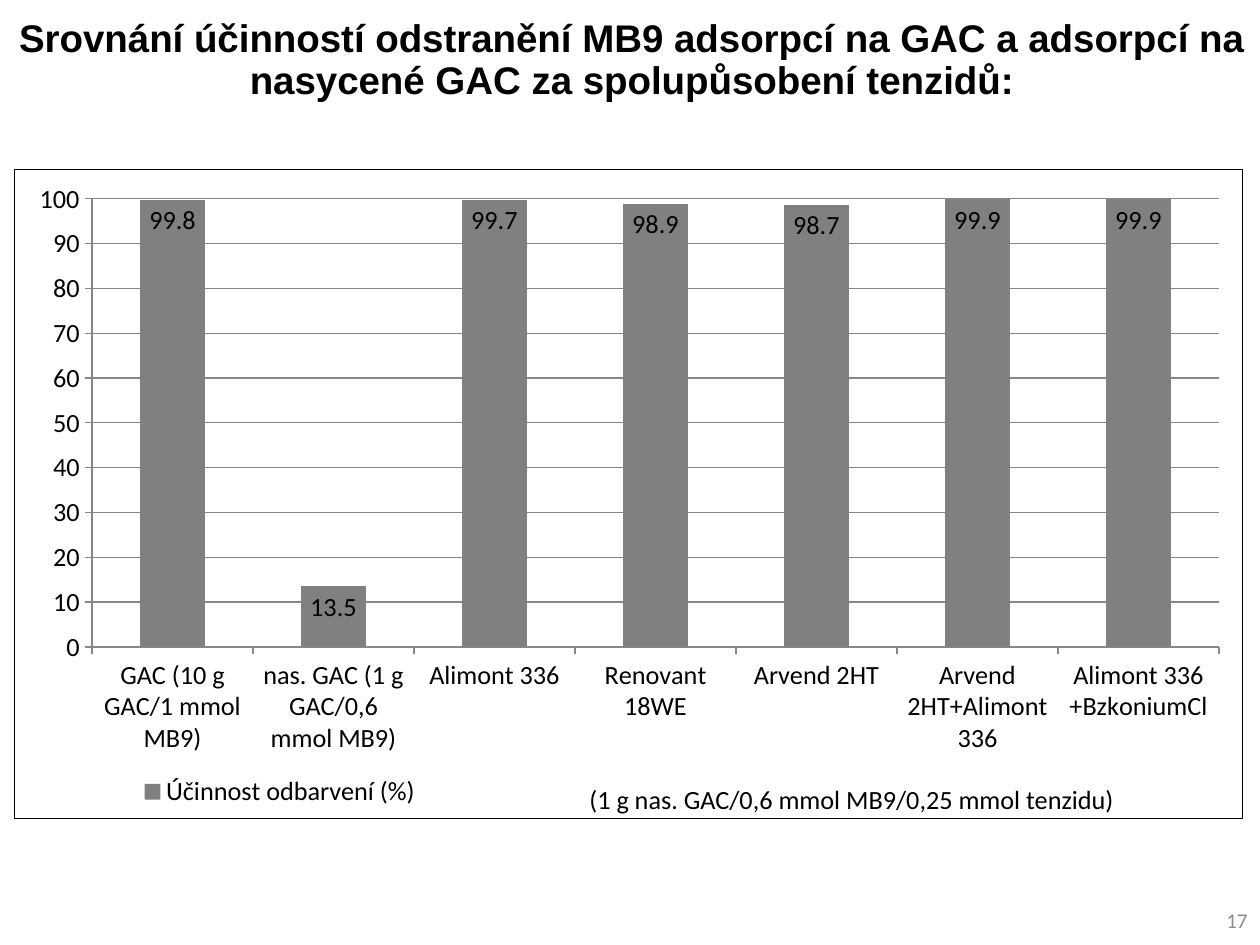
"""Build a slide comparing decolourisation efficiencies in a column chart."""
import pptx
import pptx.chart.data
import pptx.dml.color
import pptx.enum.chart
import pptx.enum.text
import pptx.oxml
import pptx.oxml.ns
import pptx.util

PX = 914400 // 126
BLACK, GREY, GRID = "000000", "808080", "878787"
CHART_LEFT, CHART_TOP, CHART_WIDTH, CHART_HEIGHT = 14, 169, 1229, 650


def color(value):
    return pptx.dml.color.RGBColor.from_string(value)


def write(shape, text, at, size, font="Calibri", ink=BLACK, bold=False, align="LEFT", spacing=1.0):
    shape.left, shape.top, shape.width, shape.height = [length * PX for length in at]
    frame = shape.text_frame
    frame.word_wrap = True
    frame.auto_size = pptx.enum.text.MSO_AUTO_SIZE.NONE
    frame.vertical_anchor = pptx.enum.text.MSO_ANCHOR.MIDDLE
    para = frame.paragraphs[0]
    para.alignment = pptx.enum.text.PP_ALIGN[align]
    para.line_spacing = spacing
    span = para.add_run()
    span.text = text
    span.font.size = pptx.util.Pt(size)
    span.font.name = font
    span.font.bold = bold
    span.font.color.rgb = color(ink)


deck = pptx.Presentation()
deck.slide_width, deck.slide_height = pptx.util.Inches(10), pptx.util.Inches(7.5)
page = deck.slides.add_slide(deck.slide_layouts[5])

write(page.shapes.title,
      "Srovnání účinností odstranění MB9 adsorpcí na GAC a adsorpcí na "
      "nasycené GAC za spolupůsobení tenzidů:",
      (0, 0, 1264, 122), 22, font="Arial", bold=True, align="CENTER", spacing=0.9)

efficiencies = {
    "GAC (10 g GAC/1 mmol MB9)": 99.8,
    "nas. GAC (1 g GAC/0,6 mmol MB9)": 13.5,
    "Alimont 336": 99.7,
    "Renovant 18WE": 98.9,
    "Arvend 2HT": 98.7,
    "Arvend 2HT+Alimont 336": 99.9,
    "Alimont 336 +BzkoniumCl": 99.9,
}
data = pptx.chart.data.CategoryChartData(number_format="0.0")
data.categories = list(efficiencies)
data.add_series("Účinnost odbarvení (%)", list(efficiencies.values()))
chart = page.shapes.add_chart(
    pptx.enum.chart.XL_CHART_TYPE.COLUMN_CLUSTERED,
    CHART_LEFT * PX, CHART_TOP * PX, CHART_WIDTH * PX, CHART_HEIGHT * PX, data).chart
chart.has_title = False
chart.font.size = pptx.util.Pt(15)
chart.font.name = "Calibri"
chart.font.color.rgb = color(BLACK)

plot = chart.plots[0]
plot.gap_width = 150
plot.vary_by_categories = False
plot.has_data_labels = True
labels = plot.data_labels
labels.show_value = True
labels.position = pptx.enum.chart.XL_LABEL_POSITION.INSIDE_END
labels.number_format = "0.0"
labels.number_format_is_linked = False
bars = plot.series[0].format.fill
bars.solid()
bars.fore_color.rgb = color(GREY)

scale = chart.value_axis
scale.minimum_scale, scale.maximum_scale, scale.major_unit = 0, 100, 10
scale.tick_labels.number_format = "0"
scale.tick_labels.number_format_is_linked = False
scale.has_major_gridlines = True
for line in (scale.format.line, scale.major_gridlines.format.line, chart.category_axis.format.line):
    line.color.rgb = color(GRID)
    line.width = pptx.util.Pt(0.75)
for axis in (scale, chart.category_axis):
    axis.major_tick_mark = pptx.enum.chart.XL_TICK_MARK.OUTSIDE

chart.has_legend = True
chart.legend.position = pptx.enum.chart.XL_LEGEND_POSITION.BOTTOM
chart.legend.include_in_layout = False

qn = pptx.oxml.ns.qn
space = chart.element
frames = (
    ("c:plotArea", 0, '<c:layoutTarget val="inner"/>', (77, 29, 1128, 449)),
    ("c:legend", 1, "", (120, 612, 290, 34)),
)
for tag, index, target, (left, top, width, height) in frames:
    parent = space.find(".//" + qn(tag))
    for old in parent.findall(qn("c:layout")):
        parent.remove(old)
    shares = {"x": left / CHART_WIDTH, "y": top / CHART_HEIGHT,
              "w": width / CHART_WIDTH, "h": height / CHART_HEIGHT}
    parts = "".join(f'<c:{name} val="{share:.3f}"/>' for name, share in shares.items())
    parent.insert(index, pptx.oxml.parse_xml(
        f'<c:layout {pptx.oxml.ns.nsdecls("c")}><c:manualLayout>{target}'
        f'<c:xMode val="edge"/><c:yMode val="edge"/>{parts}</c:manualLayout></c:layout>'))

space.find(qn("c:chart")).addnext(pptx.oxml.parse_xml(
    f'<c:spPr {pptx.oxml.ns.nsdecls("c", "a")}><a:noFill/><a:ln w="9525"><a:solidFill>'
    f'<a:srgbClr val="{BLACK}"/></a:solidFill></a:ln></c:spPr>'))

write(page.shapes.add_textbox(0, 0, 0, 0), "(1 g nas. GAC/0,6 mmol MB9/0,25 mmol tenzidu)",
      (577, 780, 600, 38), 15)
write(page.shapes.add_textbox(0, 0, 0, 0), "17", (976, 895, 284, 50), 12, ink="8C8C8C", align="RIGHT")

deck.save("out.pptx")
